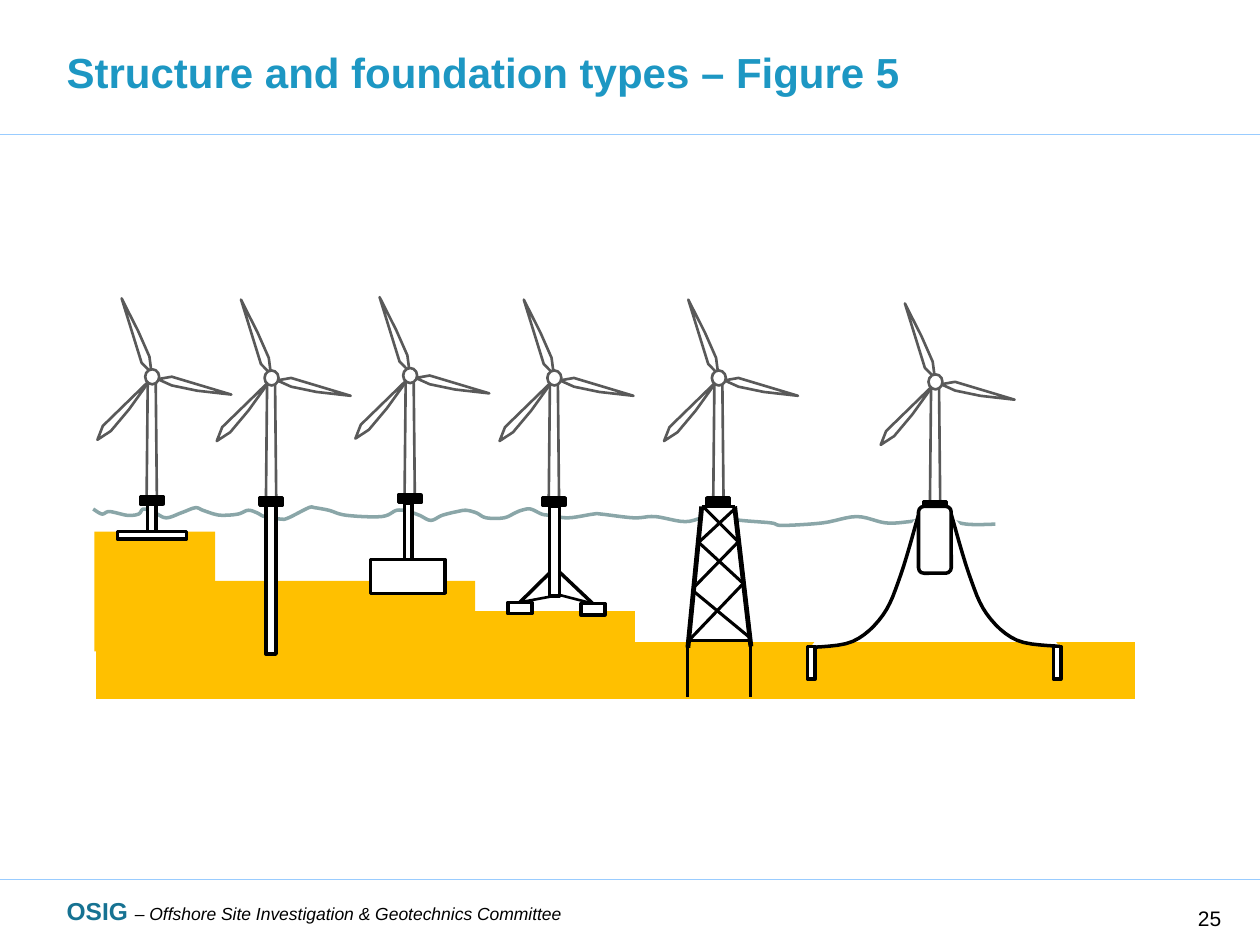
"""Build the slide that shows wind turbine structures and foundation types."""
from lxml.etree import SubElement
from pptx import Presentation
from pptx.dml.color import RGBColor
from pptx.enum.shapes import MSO_CONNECTOR as Connector, MSO_SHAPE as Preset
from pptx.enum.text import MSO_ANCHOR as Anchor
from pptx.oxml.ns import qn
from pptx.util import Pt

COLORS = {
    "title": "1D97C3", "brand": "167292", "rule": "99CCFF", "water": "8AA6A8",
    "sand": "FFC000", "turbine": "595959", "black": "000000", "white": "FFFFFF",
}


def style(shape, fill, line, width=2):
    shape.shadow.inherit = False
    if fill:
        shape.fill.solid()
        shape.fill.fore_color.rgb = RGBColor.from_string(COLORS[fill])
    else:
        shape.fill.background()
    if line:
        shape.line.color.rgb = RGBColor.from_string(COLORS[line])
        shape.line.width = Pt(width)
    else:
        shape.line.fill.background()
    return shape


def smooth(anchors, steps=6):
    padded = [anchors[0], *anchors, anchors[-1]]
    curve = [anchors[0]]
    for a, b, c, d in zip(padded, padded[1:], padded[2:], padded[3:]):
        for t in (step / steps for step in range(1, steps + 1)):
            curve.append(tuple(
                (2 * q + (r - p) * t + (2 * p - 5 * q + 4 * r - s) * t**2
                 + (3 * q - p - 3 * r + s) * t**3) / 2
                for p, q, r, s in zip(a, b, c, d)))
    return curve


presentation = Presentation()
presentation.slide_width, presentation.slide_height = Pt(720), Pt(540)
slide = presentation.slides.add_slide(presentation.slide_layouts[6])
shapes = slide.shapes

texts = [
    ((31, 15.1, 555.8, 51.1), Anchor.MIDDLE,
     [("Structure and foundation types – Figure 5", 24, "title", True, False)]),
    ((31, 508.3, 652.3, 23.8), Anchor.TOP,
     [("OSIG ", 14, "brand", True, False),
      ("– Offshore Site Investigation & Geotechnics Committee", 10, "black", False, True)]),
    ((677.5, 514.1, 33.8, 21.6), Anchor.TOP, [("25", 12, "black", False, False)]),
]
for box, anchor, runs in texts:
    frame = shapes.add_textbox(*map(Pt, box)).text_frame
    frame.word_wrap = True
    frame.vertical_anchor = anchor
    paragraph = frame.paragraphs[0]
    paragraph.font.name = "Arial"
    for text, size, color, bold, italic in runs:
        run = paragraph.add_run()
        run.text = text
        run.font.name = "Arial"
        run.font.size = Pt(size)
        run.font.bold, run.font.italic = bold, italic
        run.font.color.rgb = RGBColor.from_string(COLORS[color])

wave = [
    (0.74, 4.04), (0.81, 4.08), (0.87, 4.06), (1.01, 4.09), (1.1, 4.08), (1.14, 4.04),
    (1.23, 4.07), (1.32, 4.11), (1.44, 4.07), (1.55, 4.03), (1.61, 4.05), (1.7, 4.08),
    (1.77, 4.09), (1.89, 4.08), (1.97, 4.05), (2.04, 4.07), (2.1, 4.1), (2.23, 4.12),
    (2.29, 4.11), (2.45, 4.03), (2.5, 4.03), (2.61, 4.05), (2.75, 4.09), (3.03, 4.1),
    (3.15, 4.05), (3.24, 4.06), (3.33, 4.09), (3.42, 4.13), (3.51, 4.09), (3.63, 4.06),
    (3.7, 4.05), (3.78, 4.07), (3.86, 4.11), (4, 4.11), (4.09, 4.07), (4.14, 4.05),
    (4.21, 4.04), (4.3, 4.08), (4.36, 4.09), (4.51, 4.11), (4.71, 4.08), (4.77, 4.08),
    (5.03, 4.11), (5.2, 4.1), (5.44, 4.14), (5.63, 4.1), (5.88, 4.13), (6.12, 4.15),
    (6.21, 4.17), (6.53, 4.15), (6.8, 4.1), (7.03, 4.15), (7.22, 4.14), (7.44, 4.11),
    (7.67, 4.16), (7.9, 4.16),
]
wave_points = [(Pt(x * 72), Pt(y * 72)) for x, y in smooth(wave)]
builder = shapes.build_freeform(*wave_points[0])
builder.add_line_segments(wave_points[1:], close=False)
style(builder.convert_to_shape(), None, "water")

sand_steps = [
    ((54, 365.8, 595.4, 34.5), "white"), ((54, 303.8, 69, 68.4), None),
    ((103.7, 331.9, 167.8, 48.2), None), ((212.4, 349.2, 150.4, 23.8), None),
]
for box, outline in sand_steps:
    style(shapes.add_shape(Preset.RECTANGLE, *map(Pt, box)), "sand", outline)

turbine_parts = [
    [(3.2, 1.4), (11.2, 0), (45.2, 10.2), (25.7, 8), (11.2, 5)],
    [(-31.3, 36), (-28.2, 28.1), (-0.9, 1.5), (-13.2, 18.6), (-23.6, 31)],
    [(-0.4, -2.2), (-6.1, -8), (-17.5, -44.8), (-8, -26), (-1.6, -11.5)],
    [(-2.5, 0.7), (-3.2, 70.4), (2.7, 70.4), (2, 0.7)],
]
hubs = [(87, 215.3), (155.2, 216), (234.4, 214.6), (316.8, 216), (410.8, 216), (534.6, 218.2)]
for hub_x, hub_y in hubs:
    for part in turbine_parts:
        outline = [(Pt(hub_x + x), Pt(hub_y + y)) for x, y in part]
        builder = shapes.build_freeform(*outline[0])
        builder.add_line_segments(outline[1:])
        style(builder.convert_to_shape(), "white", "turbine", 1.5)
    hub = shapes.add_shape(Preset.OVAL, Pt(hub_x - 4), Pt(hub_y - 4.3), Pt(8), Pt(8.6))
    style(hub, "white", "turbine", 1.5)
    platform = shapes.add_shape(
        Preset.RECTANGLE, Pt(hub_x - 6.8), Pt(hub_y + 68.4), Pt(13), Pt(4.3))
    style(platform, "black", "black")

for side, top in ((1, 293.8), (-1, 294.5)):
    start_x = 534.2 + 9.4 * side
    drops = [(0, 0), (10, 33.8), (20.2, 56.9), (37.4, 72), (61.9, 75.6)]
    mooring = [(Pt(x), Pt(y)) for x, y in smooth(
        [(start_x + side * x, top + y) for x, y in drops])]
    builder = shapes.build_freeform(*mooring[0])
    builder.add_line_segments(mooring[1:], close=False)
    style(builder.convert_to_shape(), "white", "black")

foundations = {
    "monopile": (151.9, 288.7, 5.8, 85),
    "gravity shaft": (84.2, 288, 5, 15.8),
    "gravity base": (67, 303.8, 39.6, 4.3),
    "caisson shaft": (231.1, 287.3, 4.3, 32.4),
    "caisson": (211.7, 319.7, 42.5, 19.4),
    "tripod column": (313.9, 289.4, 5.8, 51.1),
    "left pad": (290.2, 344.2, 13.7, 6.5),
    "right pad": (331.9, 344.9, 13.7, 6.5),
    "spar": (524.9, 289.4, 18.7, 38.2),
    "left anchor": (461.5, 369.4, 4.3, 18.7),
    "right anchor": (601.9, 369.4, 4.3, 18.7),
    "jacket gap": (400.3, 293.8, 19.4, 9.4),
}
members = {}
for name, box in foundations.items():
    preset = Preset.ROUNDED_RECTANGLE if name == "spar" else Preset.RECTANGLE
    outline = "white" if name == "jacket gap" else "black"
    members[name] = style(shapes.add_shape(preset, *map(Pt, box)), "white", outline)

lines = [
    (0, 77, 720, 77, "rule", 0.75, None, None),
    (0, 502.6, 720, 502.6, "rule", 0.75, None, None),
    (313.9, 327.6, 297, 344.2, "black", 2, None, ("left pad", 0)),
    (319.7, 326.9, 338.8, 344.9, "black", 2, None, ("right pad", 0)),
    (297, 344.2, 316.8, 340.5, "black", 1.5, ("left pad", 0), ("tripod column", 2)),
    (319, 339.8, 338.8, 344.9, "black", 1.5, None, ("right pad", 0)),
]
jacket = [
    (401, 289.4, 419.8, 289.4), (402.5, 290.2, 422.6, 310.3), (420.5, 290.2, 399.6, 309.6),
    (398.9, 309.6, 425.5, 334.1), (422.6, 308.9, 396.7, 335.5), (395.3, 337, 428.4, 364.3),
    (424.1, 334.1, 393.8, 365.8), (393.8, 365.8, 428.4, 365.8), (393.1, 368.6, 393.1, 398.2),
    (429.1, 369.4, 429.1, 398.2),
]
lines += [(*ends, "black", 1.75, None, None) for ends in jacket]
legs = [(419.8, 289.4, 429.1, 369.4), (401, 289.4, 393.1, 370.1)]
lines += [(*ends, "black", 2.75, None, None) for ends in legs]
for x1, y1, x2, y2, color, width, begin, end in lines:
    connector = shapes.add_connector(Connector.STRAIGHT, Pt(x1), Pt(y1), Pt(x2), Pt(y2))
    connector.line.color.rgb = RGBColor.from_string(COLORS[color])
    connector.line.width = Pt(width)
    SubElement(connector._element.spPr, qn("a:effectLst"))
    if begin:
        connector.begin_connect(members[begin[0]], begin[1])
    if end:
        connector.end_connect(members[end[0]], end[1])

presentation.save("out.pptx")
